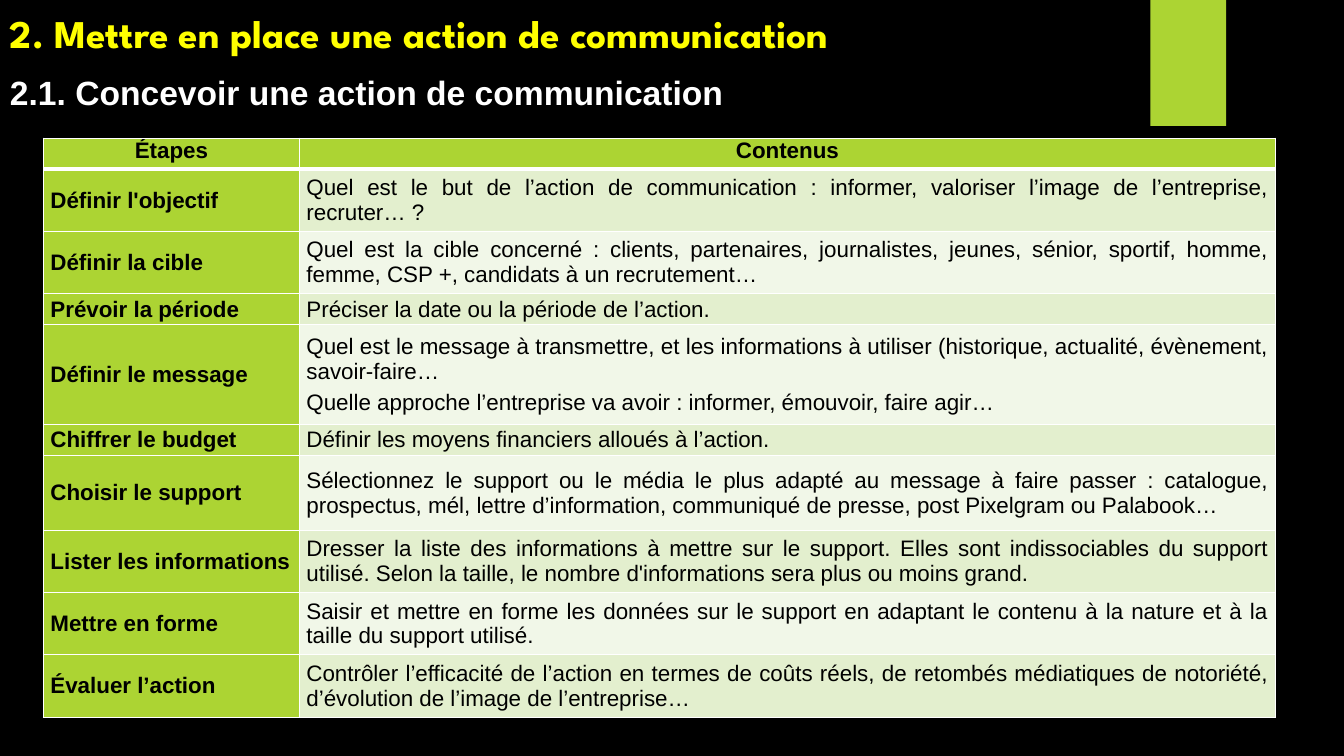
from dataclasses import dataclass

from lxml import etree
from pptx import Presentation
from pptx import util as u
from pptx.dml.color import RGBColor
from pptx.enum import shapes, text
from pptx.oxml import ns

SLIDE_W, SLIDE_H = u.Inches(13.33), u.Inches(7.5)
COLORS = {
    "black": "000000", "white": "FFFFFF", "yellow": "FFFF00",
    "lime": "ACD433", "band_dark": "E3EFCE", "band_light": "F1F7E8",
}
STEP_COLUMN, CONTENT_COLUMN = 19.05, 72.62  # percent of the slide width
LINE_ROW = 4.12  # percent of the slide height for a one-line row
CELL_INSET = u.Inches(0.07)


@dataclass(frozen=True)
class Heading:
    wording: str
    top: float
    height: float
    font: str
    size: int
    color: str
    anchor: text.MSO_ANCHOR


@dataclass(frozen=True)
class Step:
    name: str
    content: str
    lines: float = 2


HEADINGS = [
    Heading("2. Mettre en place une action de communication", 0, 8.13,
            "League Spartan", 28, "yellow", text.MSO_ANCHOR.BOTTOM),
    Heading("2.1. Concevoir une action de communication", 8.8, 6.67,
            "Arial", 24, "white", text.MSO_ANCHOR.TOP),
]

STEPS = [
    Step("Définir l'objectif",
         "Quel est le but de l’action de communication : informer, valoriser "
         "l’image de l’entreprise, recruter… ?"),
    Step("Définir la cible",
         "Quel est la cible concerné : clients, partenaires, journalistes, jeunes, "
         "sénior, sportif, homme, femme, CSP +, candidats à un recrutement…"),
    Step("Prévoir la période", "Préciser la date ou la période de l’action.", 1),
    Step("Définir le message",
         "Quel est le message à transmettre, et les informations à utiliser "
         "(historique, actualité, évènement, savoir-faire…\n"
         "Quelle approche l’entreprise va avoir : informer, émouvoir, faire agir…", 3.2),
    Step("Chiffrer le budget", "Définir les moyens financiers alloués à l’action.", 1),
    Step("Choisir le support",
         "Sélectionnez le support ou le média le plus adapté au message à faire "
         "passer : catalogue, prospectus, mél, lettre d’information, communiqué de "
         "presse, post Pixelgram ou Palabook…", 2.4),
    Step("Lister les informations",
         "Dresser la liste des informations à mettre sur le support. Elles sont "
         "indissociables du support utilisé. Selon la taille, le nombre "
         "d'informations sera plus ou moins grand."),
    Step("Mettre en forme",
         "Saisir et mettre en forme les données sur le support en adaptant le "
         "contenu à la nature et à la taille du support utilisé."),
    Step("Évaluer l’action",
         "Contrôler l’efficacité de l’action en termes de coûts réels, de retombés "
         "médiatiques de notoriété, d’évolution de l’image de l’entreprise…"),
]


def across(percent: float) -> int:
    return round(SLIDE_W * percent / 100)


def down(percent: float) -> int:
    return round(SLIDE_H * percent / 100)


def rgb(color: str) -> RGBColor:
    return RGBColor.from_string(COLORS[color])


def style_font(font, family: str, size: int, color: str, bold: bool) -> None:
    font.name, font.size, font.bold = family, u.Pt(size), bold
    font.color.rgb = rgb(color)


def add_heading(slide, heading: Heading) -> None:
    frame = slide.shapes.add_textbox(
        0, down(heading.top), across(80), down(heading.height)).text_frame
    frame.word_wrap = True
    frame.vertical_anchor = heading.anchor
    frame.text = heading.wording
    style_font(frame.paragraphs[0].runs[0].font,
               heading.font, heading.size, heading.color, True)


def add_accent(slide) -> None:
    accent = slide.shapes.add_shape(
        shapes.MSO_SHAPE.RECTANGLE, across(85.6), 0, across(5.63), down(16.67))
    accent.shadow.inherit = False
    accent.fill.solid()
    accent.fill.fore_color.rgb = rgb("lime")
    accent.line.fill.background()


def add_borders(cell, bottom: float) -> None:
    properties = cell._tc.get_or_add_tcPr()
    for side, width in zip("LRTB", (1, 1, 1, bottom)):
        line = etree.SubElement(properties, ns.qn(f"a:ln{side}"), w=str(u.Pt(width)))
        fill = etree.SubElement(line, ns.qn("a:solidFill"))
        etree.SubElement(fill, ns.qn("a:srgbClr"), val=COLORS["white"])


def fill_cell(cell, wording: str, color: str, alignment: text.PP_ALIGN,
              bold: bool = True, header: bool = False) -> None:
    add_borders(cell, 3 if header else 1)
    cell.fill.solid()
    cell.fill.fore_color.rgb = rgb(color)
    cell.margin_left = cell.margin_right = CELL_INSET
    cell.margin_top = cell.margin_bottom = 0
    cell.vertical_anchor = text.MSO_ANCHOR.TOP if header else text.MSO_ANCHOR.MIDDLE
    cell.text_frame.text = wording
    for index, paragraph in enumerate(cell.text_frame.paragraphs):
        paragraph.alignment = alignment
        paragraph.space_before = u.Pt(2 if index else 0)
        paragraph.space_after = u.Pt(3 if header else 2)
        style_font(paragraph.runs[0].font, "Arial", 16, "black", bold)


def add_steps_table(slide) -> None:
    line_counts = [1, *(step.lines for step in STEPS)]
    table = slide.shapes.add_table(
        len(line_counts), 2, across(3.23), down(18.27),
        across(STEP_COLUMN + CONTENT_COLUMN), down(LINE_ROW * sum(line_counts))).table
    table.first_row = table.horz_banding = False
    for column, width in zip(table.columns, (STEP_COLUMN, CONTENT_COLUMN)):
        column.width = across(width)
    for row, lines in zip(table.rows, line_counts):
        row.height = down(LINE_ROW * lines)

    for column, label in enumerate(("Étapes", "Contenus")):
        fill_cell(table.cell(0, column), label, "lime", text.PP_ALIGN.CENTER, header=True)
    for row, step in enumerate(STEPS, start=1):
        band = "band_dark" if row % 2 else "band_light"
        fill_cell(table.cell(row, 0), step.name, "lime", text.PP_ALIGN.LEFT)
        fill_cell(table.cell(row, 1), step.content, band, text.PP_ALIGN.JUSTIFY, bold=False)


def main() -> None:
    deck = Presentation()
    deck.slide_width, deck.slide_height = SLIDE_W, SLIDE_H
    slide = deck.slides.add_slide(deck.slide_layouts[6])
    slide.background.fill.solid()
    slide.background.fill.fore_color.rgb = rgb("black")
    add_accent(slide)
    for heading in HEADINGS:
        add_heading(slide, heading)
    add_steps_table(slide)
    deck.save("out.pptx")


if __name__ == "__main__":
    main()
